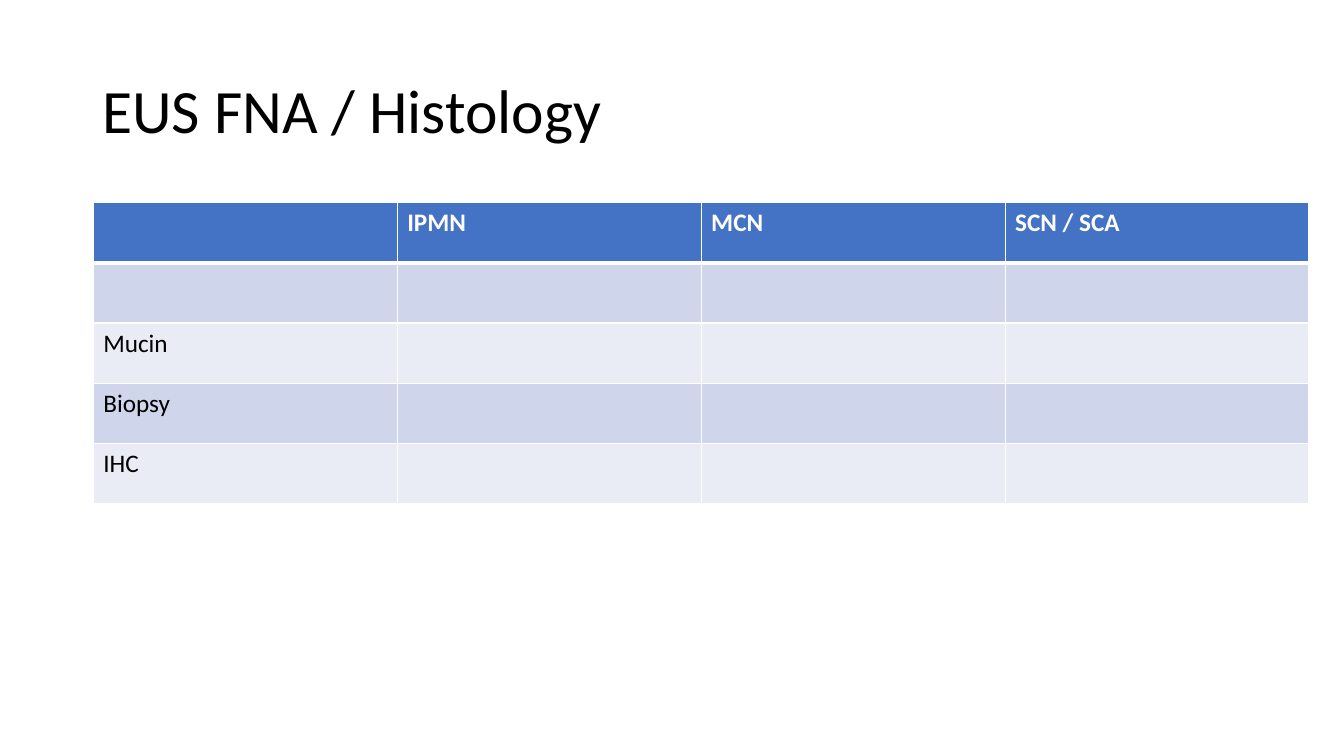
"""Build a slide with a table of EUS FNA and histology findings."""
from pptx import Presentation, util as u
from pptx.dml.color import RGBColor
from pptx.enum import text
from pptx.oxml import parse_xml
from pptx.oxml.ns import nsdecls


def add_run(para, words, size, color, bold=False):
    run = para.add_run()
    run.text = words
    font = run.font
    font.name, font.size, font.bold = "Calibri", u.Pt(size), bold
    font.color.rgb = RGBColor.from_string(color)


def add_edge(cell, side, width):
    cell._tc.get_or_add_tcPr().append(parse_xml(
        f'<a:ln{side} {nsdecls("a")} w="{u.Pt(width)}"><a:solidFill>'
        f'<a:srgbClr val="FFFFFF"/></a:solidFill></a:ln{side}>'))


deck = Presentation()
deck.slide_width, deck.slide_height = u.Cm(33.87), u.Cm(19.05)
slide = deck.slides.add_slide(deck.slide_layouts[6])

title = slide.shapes.add_textbox(u.Cm(2.33), u.Cm(1.01), u.Cm(29.21), u.Cm(3.68))
frame = title.text_frame
frame.word_wrap = True
frame.vertical_anchor = text.MSO_ANCHOR.MIDDLE
frame.paragraphs[0].line_spacing = 0.9
add_run(frame.paragraphs[0], "EUS FNA / Histology", 44, "000000")

rows = [
    ["", "IPMN", "MCN", "SCN / SCA"],
    ["", "", "", ""],
    ["Mucin", "", "", ""],
    ["Biopsy", "", "", ""],
    ["IHC", "", "", ""],
]
table = slide.shapes.add_table(
    len(rows), len(rows[0]), u.Cm(2.35), u.Cm(5.1), u.Cm(30.4), u.Cm(7.6)).table
for col in table.columns:
    col.width = u.Cm(7.66)
for row in table.rows:
    row.height = u.Cm(1.52)

for r, row in enumerate(rows):
    head = r == 0
    fill = "4472C4" if head else ("E9EBF5", "CFD5EA")[r % 2]
    for c, words in enumerate(row):
        cell = table.cell(r, c)
        for side in "LRTB":
            thick = (r, side) in [(0, "B"), (1, "T")]
            add_edge(cell, side, 3 if thick else 1)
        cell.fill.solid()
        cell.fill.fore_color.rgb = RGBColor.from_string(fill)
        if words:
            add_run(cell.text_frame.paragraphs[0], words, 18,
                    "FFFFFF" if head else "000000", head)

deck.save("out.pptx")
